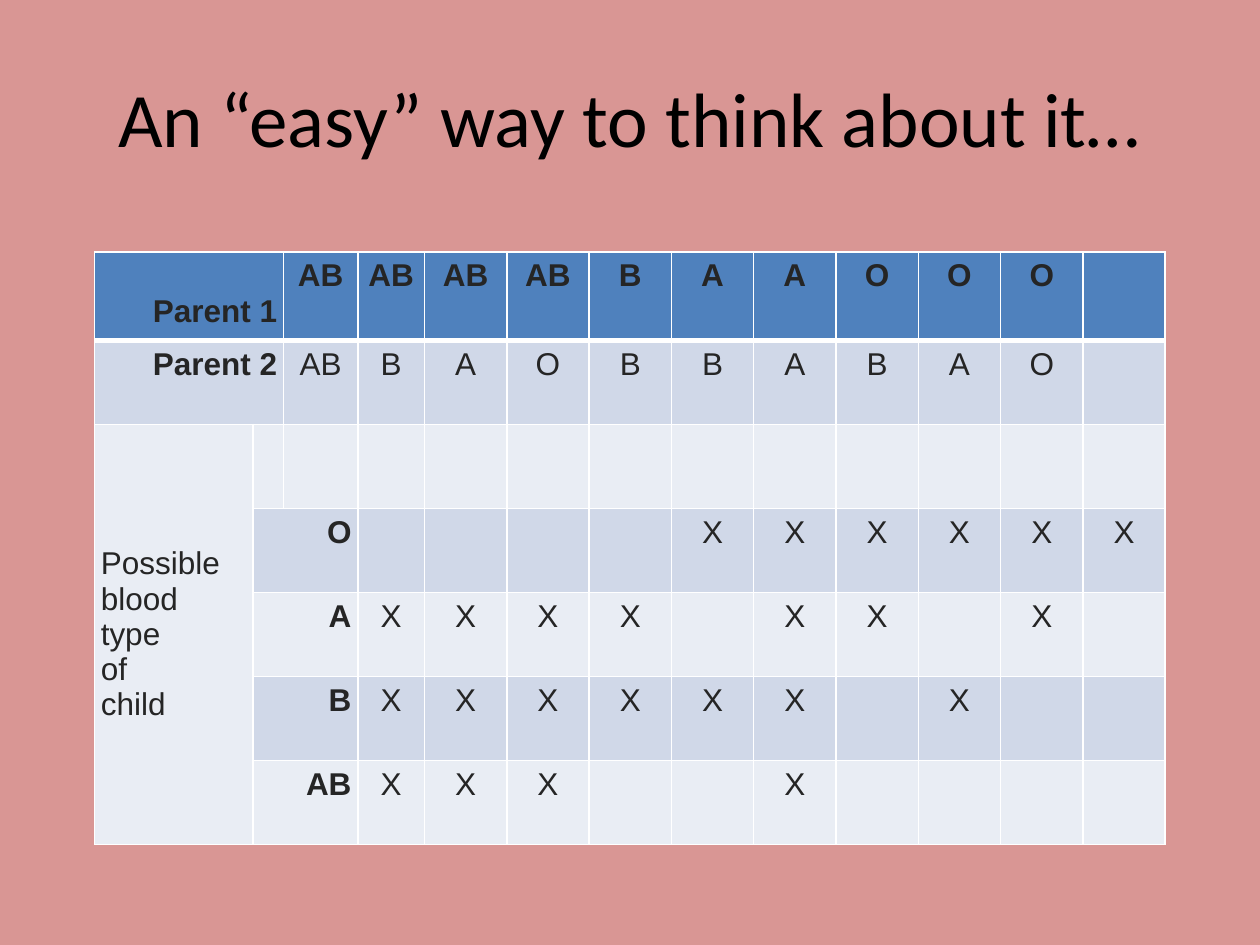
from lxml import etree
from pptx import Presentation
from pptx.dml.color import RGBColor
from pptx.enum.text import MSO_ANCHOR, PP_ALIGN
from pptx.oxml.ns import qn
from pptx.util import Inches, Pt

LEFT, CENTER, RIGHT = PP_ALIGN.LEFT, PP_ALIGN.CENTER, PP_ALIGN.RIGHT
TOP, MIDDLE = MSO_ANCHOR.TOP, MSO_ANCHOR.MIDDLE

BACKGROUND = "D99694"
HEADER_FILL = "4F81BD"
BAND_FILLS = ("E9EDF4", "D0D8E8")
BORDER = "FFFFFF"
TABLE_TEXT = "252525"

PARENT_1 = "AB AB AB AB B A A O O O".split()
PARENT_2 = "AB B A O B B A B A O".split()
# One character per parent pair, starting in the fourth table column
CHILD_TYPES = {
    "O": "....XXXXXX",
    "A": "XXXX.XX.X.",
    "B": "XXXXXX.X..",
    "AB": "XXX..X....",
}
FIRST_COLUMNS = [1.26, 0.24, 0.59, 0.53]
COLUMN_COUNT = 13
ROW_COUNT = 7


def color(value):
    return RGBColor.from_string(value)


def style_paragraph(paragraph, size, name, text_color, alignment, bold=False):
    paragraph.alignment = alignment
    font = paragraph.font
    font.size, font.name, font.bold = Pt(size), name, bold
    font.color.rgb = color(text_color)


def add_title(slide, left, top, width, height):
    box = slide.shapes.add_textbox(Inches(left), Inches(top), Inches(width), Inches(height))
    frame = box.text_frame
    frame.word_wrap = True
    frame.vertical_anchor = MIDDLE
    frame.text = "An “easy” way to think about it…"
    style_paragraph(frame.paragraphs[0], 44, "Calibri", "000000", CENTER)


def add_borders(cell, row):
    """Draw thin borders, with a thick line between the header and the body."""
    widths = {"L": 1, "R": 1, "T": 3 if row == 1 else 1, "B": 3 if row == 0 else 1}
    properties = cell._tc.get_or_add_tcPr()
    for side, width in widths.items():
        line = etree.SubElement(properties, qn(f"a:ln{side}"), w=str(Pt(width)))
        fill = etree.SubElement(line, qn("a:solidFill"))
        etree.SubElement(fill, qn("a:srgbClr"), val=BORDER)


def write_cell(cell, text, alignment=CENTER, bold=False, anchor=TOP):
    cell.text = text
    cell.vertical_anchor = anchor
    style_paragraph(cell.text_frame.paragraphs[0], 18, "Arial", TABLE_TEXT, alignment, bold)


def add_blood_type_table(slide, left, top, width, height):
    table = slide.shapes.add_table(
        ROW_COUNT, COLUMN_COUNT, Inches(left), Inches(top), Inches(width), Inches(height)
    ).table
    table.first_row = table.horz_banding = False
    equal_width = (width - sum(FIRST_COLUMNS)) / (COLUMN_COUNT - len(FIRST_COLUMNS))
    for index, column in enumerate(table.columns):
        column.width = Inches(FIRST_COLUMNS[index] if index < len(FIRST_COLUMNS) else equal_width)

    for row_index, row in enumerate(table.rows):
        row.height = Inches(height / ROW_COUNT)
        for cell in row.cells:
            cell.margin_left = cell.margin_right = Inches(0.05)
            cell.margin_top = cell.margin_bottom = Inches(0.05)
            add_borders(cell, row_index)
            cell.fill.solid()
            fill = BAND_FILLS[row_index % 2] if row_index else HEADER_FILL
            cell.fill.fore_color.rgb = color(fill)

    parents = (("\vParent 1", PARENT_1), ("Parent 2", PARENT_2))
    for row, (label, blood_types) in enumerate(parents):
        table.cell(row, 0).merge(table.cell(row, 1))
        write_cell(table.cell(row, 0), label, RIGHT, bold=True)
        for column, blood_type in enumerate(blood_types, start=2):
            write_cell(table.cell(row, column), blood_type, bold=row == 0)

    table.cell(2, 0).merge(table.cell(ROW_COUNT - 1, 0))
    write_cell(table.cell(2, 0), "Possible\vblood\vtype\vof\vchild", LEFT, anchor=MIDDLE)

    for row, (blood_type, marks) in enumerate(CHILD_TYPES.items(), start=3):
        table.cell(row, 1).merge(table.cell(row, 2))
        write_cell(table.cell(row, 1), blood_type, RIGHT, bold=True)
        for column, mark in enumerate(marks, start=3):
            if mark == "X":
                write_cell(table.cell(row, column), mark)


def main():
    presentation = Presentation()
    presentation.slide_width, presentation.slide_height = Inches(10), Inches(7.5)
    slide = presentation.slides.add_slide(presentation.slide_layouts[6])
    slide.background.fill.solid()
    slide.background.fill.fore_color.rgb = color(BACKGROUND)
    add_title(slide, 0.5, 0.3, 9, 1.25)
    add_blood_type_table(slide, 0.75, 2, 8.5, 4.67)
    presentation.save("out.pptx")


if __name__ == "__main__":
    main()
